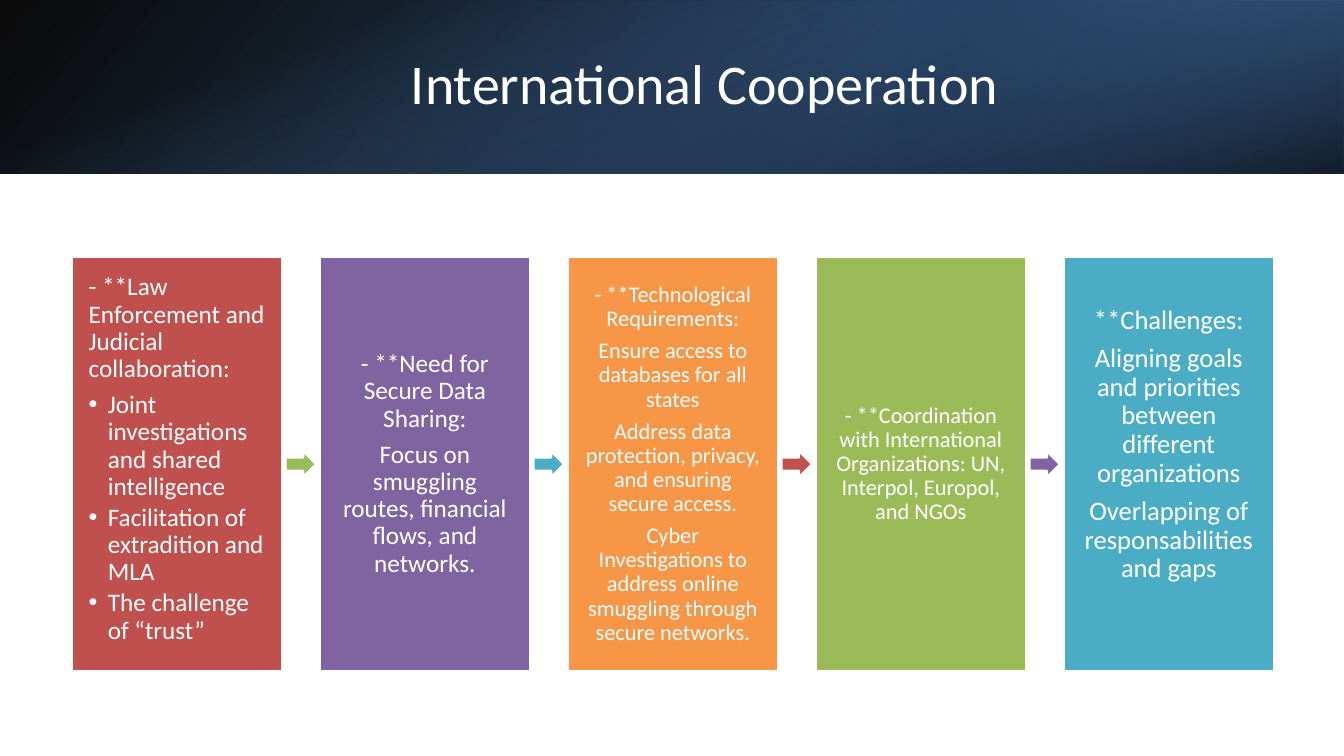
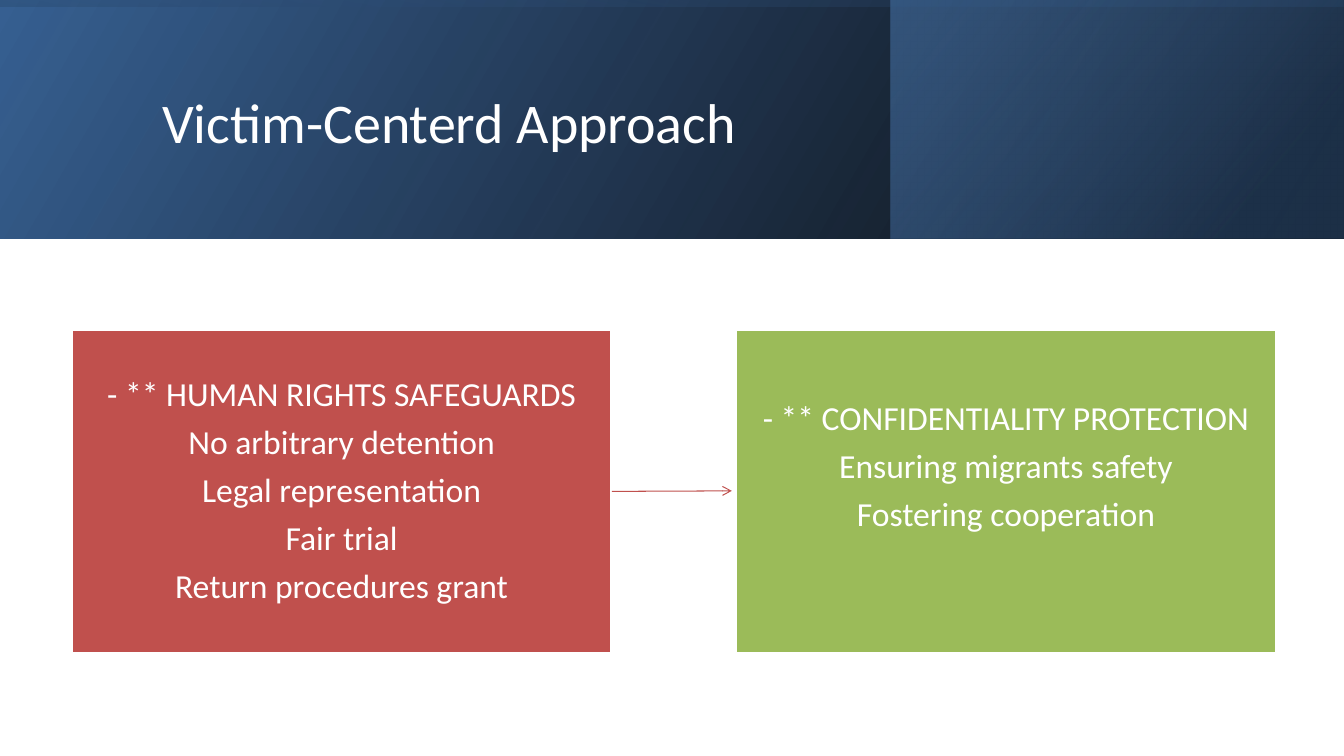
from lxml import etree
from pptx import Presentation, util as u
from pptx.dml.color import RGBColor
from pptx.enum import shapes, text
from pptx.oxml.ns import qn

PX = 9144  # 100 px to the inch
WIDTH = 1333
FONT = "Calibri"

WHITE = RGBColor(0xFF, 0xFF, 0xFF)
BLACK = RGBColor(0x00, 0x00, 0x00)
NAVY = RGBColor(0x25, 0x40, 0x61)
STEEL = RGBColor(0x37, 0x60, 0x92)
BLUE = RGBColor(0x4F, 0x81, 0xBD)
RED = RGBColor(0xC0, 0x50, 0x4D)
PURPLE = RGBColor(0x80, 0x64, 0xA2)
ORANGE = RGBColor(0xF7, 0x96, 0x46)
GREEN = RGBColor(0x9B, 0xBB, 0x59)
TEAL = RGBColor(0x4B, 0xAC, 0xC6)

LEFT, CENTER = text.PP_ALIGN.LEFT, text.PP_ALIGN.CENTER
TOP, MIDDLE = text.MSO_ANCHOR.TOP, text.MSO_ANCHOR.MIDDLE
RECTANGLE = shapes.MSO_SHAPE.RECTANGLE


def emu(*lengths):
    return [u.Emu(length * PX) for length in lengths]


def add_block(page, kind, box):
    block = page.shapes.add_shape(kind, *emu(*box))
    block.shadow.inherit = False
    return block


def add_solid(page, kind, box, color):
    block = add_block(page, kind, box)
    block.fill.solid()
    block.fill.fore_color.rgb = color
    block.line.color.rgb = WHITE
    block.line.width = u.Pt(2)
    return block


def add_gradient(page, box, stops, clockwise, rotation=0, flip=False):
    """Stops are (position %, colour, opacity %)."""
    layer = add_block(page, RECTANGLE, box)
    layer.line.fill.background()
    layer.rotation = rotation
    if flip:
        layer._element.spPr.find(qn("a:xfrm")).set("flipH", "1")
    layer.fill.gradient()
    layer.fill.gradient_angle = 360 - clockwise
    for stop, (position, color, opacity) in zip(layer.fill.gradient_stops, stops):
        stop.position = position / 100
        stop.color.rgb = color
    colors = layer._element.spPr.iter(qn("a:srgbClr"))
    for node, (position, color, opacity) in zip(list(colors), stops):
        if opacity < 100:
            etree.SubElement(node, qn("a:alpha")).set("val", str(opacity * 1000))


def add_band(page, height, base_angle, side, side_opacity, side_rotation, sweep):
    """Three gradients: the base, a part at the right, and a turned sweep."""
    add_gradient(page, (0, 0, WIDTH, height),
                 [(0, BLACK, 96), (100, STEEL, 100)], base_angle, flip=True)
    add_gradient(page, (side, 0, WIDTH - side, height),
                 [(19, NAVY, 68), (100, BLUE, side_opacity)], 320,
                 rotation=side_rotation, flip=True)
    offset = (WIDTH - height) // 2
    add_gradient(page, (offset, -offset, height, WIDTH), **sweep)


def format_para(para, size, align, after):
    para.alignment = align
    para.line_spacing = 0.9
    para.space_after = u.Pt(size * after)
    for span in para.runs:
        span.font.size = u.Pt(size)
        span.font.name = FONT
        span.font.color.rgb = WHITE


def add_bullet(para):
    props = para._p.get_or_add_pPr()
    props.set("marL", str(19 * PX))
    props.set("indent", str(-19 * PX))
    etree.SubElement(props, qn("a:buFont")).set("typeface", "Arial")
    etree.SubElement(props, qn("a:buChar")).set("char", "•")


def set_title(page, box, words, align):
    title = page.shapes.title
    title.left, title.top, title.width, title.height = emu(*box)
    frame = title.text_frame
    frame.text = words
    frame.auto_size = text.MSO_AUTO_SIZE.NONE
    frame.vertical_anchor = MIDDLE
    format_para(frame.paragraphs[0], 40, align, 0)
    page.shapes._spTree.append(title._element)


def add_card(page, box, color, size, lines, inset, lift=0, bulleted=False):
    """Lift is extra room below the text; bulleted lists follow a heading."""
    card = add_solid(page, RECTANGLE, box, color)
    frame = card.text_frame
    frame.word_wrap = True
    frame.vertical_anchor = TOP if bulleted else MIDDLE
    side, edge = inset
    frame.margin_left, frame.margin_right = emu(side, side)
    frame.margin_top, frame.margin_bottom = emu(edge, edge + lift)
    frame.text = "\n".join(lines)
    for index, para in enumerate(frame.paragraphs):
        is_item = bulleted and index > 0
        format_para(para, size, LEFT if bulleted else CENTER, 0.15 if is_item else 0.35)
        if is_item:
            add_bullet(para)
    return card


def add_process(page, box, cards, arrow_colors):
    """Equal cards in a row with a block arrow centred in each gap."""
    left, top, width, height = box
    gap, arrow_width, arrow_height = 37, 31, 27
    card_width = (width - gap * (len(cards) - 1)) // len(cards)
    for index, card in enumerate(cards):
        x = left + index * (card_width + gap)
        add_card(page, (x, top, card_width, height), inset=(17, 17), **card)
        if index < len(arrow_colors):
            add_solid(page, shapes.MSO_SHAPE.RIGHT_ARROW,
                      (x + card_width + (gap - arrow_width) // 2,
                       top + (height - arrow_height) // 2,
                       arrow_width, arrow_height), arrow_colors[index])


def add_pair(page, box, first, second):
    left, top, width, height = box
    card_width, arrow_gap = 536, 4
    source = add_card(page, (left, top, card_width, height), inset=(26, 28), **first)
    right = left + width - card_width
    add_card(page, (right, top, card_width, height), inset=(26, 28), **second)
    middle = top + height // 2
    arrow = page.shapes.add_connector(
        shapes.MSO_CONNECTOR.STRAIGHT,
        *emu(left + card_width, middle, right - arrow_gap, middle))
    arrow.begin_connect(source, 3)
    arrow.line.color.rgb = RED
    arrow.line.width = u.Pt(0.75)
    etree.SubElement(arrow.line._get_or_add_ln(), qn("a:tailEnd")).set("type", "arrow")
    etree.SubElement(arrow._element.spPr, qn("a:effectLst"))


def build_cooperation(page):
    add_band(page, 172, 140, 889, 79, 180,
             dict(stops=[(23, BLUE, 0), (99, BLACK, 74)], clockwise=340, rotation=90))
    set_title(page, (150, 38, 1098, 96), "International Cooperation", CENTER)
    add_process(page, (71, 255, 1193, 411), [
        dict(color=RED, size=18, bulleted=True, lines=[
            "- **Law Enforcement and Judicial collaboration:",
            "Joint investigations and shared intelligence",
            "Facilitation of extradition and MLA",
            "The challenge of “trust”"]),
        dict(color=PURPLE, size=18, lines=[
            "- **Need for Secure Data Sharing:",
            "Focus on smuggling routes, financial flows, and networks."]),
        dict(color=ORANGE, size=16, lines=[
            "- **Technological Requirements:",
            "Ensure access to databases for all states",
            "Address data protection, privacy, and ensuring secure access.",
            "Cyber Investigations to address online smuggling through secure networks."]),
        dict(color=GREEN, size=16, lines=[
            "- **Coordination with International Organizations: "
            "UN, Interpol, Europol, and NGOs"]),
        dict(color=TEAL, size=19, lift=38, lines=[
            "**Challenges:",
            "Aligning goals and priorities between different organizations",
            "Overlapping of responsabilities and gaps"]),
    ], [GREEN, TEAL, RED, PURPLE])


def build_victims(page):
    add_band(page, 237, 330, 884, 48, 0,
             dict(stops=[(23, STEEL, 16), (99, BLACK, 45)], clockwise=350,
                  rotation=270, flip=True))
    set_title(page, (151, 38, 1063, 172), "Victim-Centerd Approach", LEFT)
    add_pair(page, (71, 327, 1195, 321),
             dict(color=RED, size=24, lines=[
                 "- ** HUMAN RIGHTS SAFEGUARDS",
                 "No arbitrary detention",
                 "Legal representation",
                 "Fair trial",
                 "Return procedures grant"]),
             dict(color=GREEN, size=24, lift=48, lines=[
                 "- ** CONFIDENTIALITY PROTECTION",
                 "Ensuring migrants safety",
                 "Fostering cooperation"]))


def main():
    deck = Presentation()
    deck.slide_width, deck.slide_height = u.Emu(12192000), u.Emu(750 * PX)
    for build in (build_cooperation, build_victims):
        build(deck.slides.add_slide(deck.slide_layouts[5]))
    deck.save("out.pptx")


if __name__ == "__main__":
    main()
